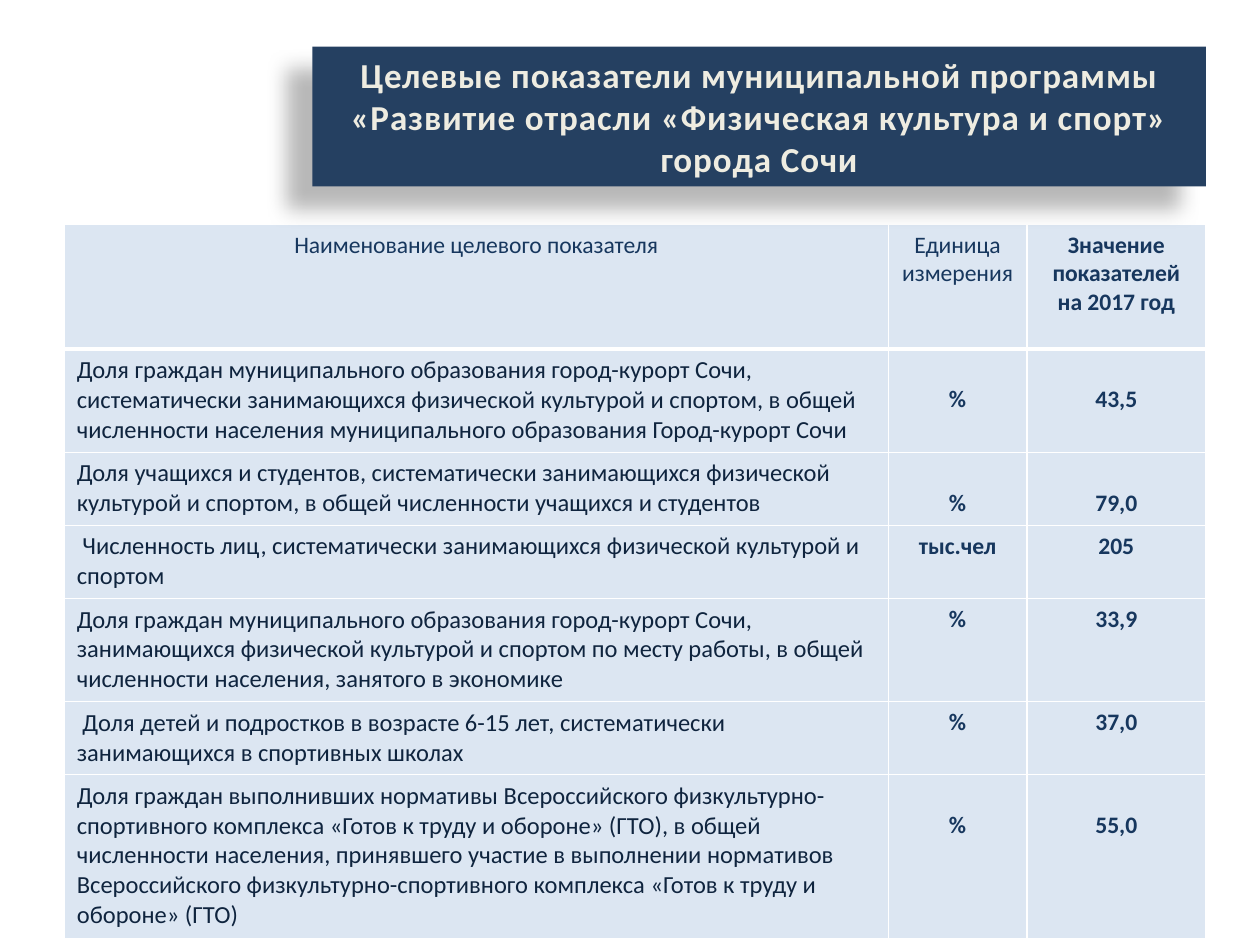
from lxml import etree
from pptx import Presentation
from pptx.dml.color import RGBColor
from pptx.enum.shapes import MSO_SHAPE
from pptx.enum.text import MSO_ANCHOR, PP_ALIGN
from pptx.oxml.ns import qn
from pptx.util import Emu, Inches, Pt

RECT = MSO_SHAPE.RECTANGLE
MIDDLE = MSO_ANCHOR.MIDDLE
CENTER, LEFT = PP_ALIGN.CENTER, PP_ALIGN.LEFT
FONT = "Calibri"
NAVY, BLUE, INK = "254061", "17375E", "0F243E"
PALE, CREAM, WHITE = "DCE6F2", "EEECE1", "FFFFFF"

TITLE = ["Целевые показатели муниципальной программы",
         "«Развитие отрасли «Физическая культура и спорт» города Сочи"]
HEADER = ["Наименование целевого показателя", "Единица измерения",
          "Значение показателей на 2017 год"]
COLS = [6.54, 1.1, 1.42]
HEADER_HEIGHT = 0.99
LINE = 0.24       # height of one line of an indicator's name
MARGIN = 0.05     # above and below the text of a cell

# name, unit, value, lines in the name, whether the value starts a line lower
INDICATORS = [
    ("Доля граждан муниципального образования город-курорт Сочи, систематически "
     "занимающихся физической культурой и спортом, в общей численности населения "
     "муниципального образования Город-курорт Сочи", "%", "43,5", 3, True),
    ("Доля учащихся и студентов, систематически занимающихся физической культурой "
     "и спортом, в общей численности учащихся и студентов", "%", "79,0", 2, True),
    (" Численность лиц, систематически занимающихся физической культурой и спортом",
     "тыс.чел", "205", 2, False),
    ("Доля граждан муниципального образования город-курорт Сочи, занимающихся "
     "физической культурой и спортом по месту работы, в общей численности населения, "
     "занятого в экономике", "%", "33,9", 3, False),
    (" Доля детей и подростков в возрасте 6-15 лет, систематически занимающихся "
     "в спортивных школах", "%", "37,0", 2, False),
    ("Доля граждан выполнивших нормативы Всероссийского физкультурно-спортивного "
     "комплекса «Готов к труду и обороне» (ГТО), в общей численности населения, "
     "принявшего участие в выполнении нормативов Всероссийского "
     "физкультурно-спортивного комплекса «Готов к труду и обороне» (ГТО)",
     "%", "55,0", 5, True),
]


def rgb(value):
    return RGBColor.from_string(value)


def add_run(p, text, size, color, bold=False, align=CENTER):
    p.alignment = align
    r = p.add_run()
    r.text = text
    r.font.name, r.font.size, r.font.bold = FONT, Pt(size), bold
    r.font.color.rgb = rgb(color)
    return r


def add_color(parent, value):
    fill = etree.SubElement(parent, qn("a:solidFill"))
    return etree.SubElement(fill, qn("a:srgbClr"), val=value)


def add_shadow(shape, color, alpha, blur, distance, angle):
    """Alpha in percent, blur and distance in points, angle in degrees."""
    shape.shadow.inherit = False
    effects = shape._element.spPr.find(qn("a:effectLst"))
    shadow = etree.SubElement(
        effects, qn("a:outerShdw"), blurRad=str(Pt(blur)), dist=str(Pt(distance)),
        dir=str(angle * 60000), algn="ctr", rotWithShape="0")
    clr = etree.SubElement(shadow, qn("a:srgbClr"), val=color)
    etree.SubElement(clr, qn("a:alpha"), val=str(alpha * 1000))


def set_borders(cell, **widths):
    tcPr = cell._tc.get_or_add_tcPr()
    for i, side in enumerate("LRTB"):
        line = etree.Element(qn(f"a:ln{side}"), w=str(Pt(widths.get(side, 1))))
        add_color(line, WHITE)
        tcPr.insert(i, line)


def fill_cell(cell, text, size, color, bold=False, align=CENTER, drop=0, bottom=1):
    cell.fill.solid()
    cell.fill.fore_color.rgb = rgb(PALE)
    cell.margin_top = Inches(MARGIN + drop)
    cell.margin_bottom = Inches(MARGIN)
    add_run(cell.text_frame.paragraphs[0], text, size, color, bold, align)
    set_borders(cell, B=bottom)


def title_banner(s, x, y, w, h):
    sp = s.shapes.add_shape(RECT, x, y, w, h)
    sp.fill.solid()
    sp.fill.fore_color.rgb = rgb(NAVY)
    sp.line.fill.background()
    add_shadow(sp, "000000", 28, 11.8, 19.7, 141)
    tf = sp.text_frame
    tf.word_wrap = True
    tf.vertical_anchor = MIDDLE
    for i, text in enumerate(TITLE):
        p = tf.add_paragraph() if i else tf.paragraphs[0]
        r = add_run(p, text, 20, CREAM, bold=True)
        r.font._element.set("spc", "50")


def indicator_table(s, x, y, w):
    heights = [HEADER_HEIGHT] + [n * LINE + 2 * MARGIN for *_, n, _ in INDICATORS]
    table = s.shapes.add_table(len(heights), len(COLS), x, y, w,
                               Inches(sum(heights))).table
    for column, share in zip(table.columns, COLS):
        column.width = Emu(int(w * share / sum(COLS)))
    for row, height in zip(table.rows, heights):
        row.height = Inches(height)
    for i, text in enumerate(HEADER):
        fill_cell(table.cell(0, i), text, 13.5, BLUE, bold=i == 2, bottom=3)
    for i, (name, unit, value, _, lower) in enumerate(INDICATORS, 1):
        fill_cell(table.cell(i, 0), name, 14, INK, align=LEFT)
        for j, text in enumerate((unit, value), 1):
            fill_cell(table.cell(i, j), text, 13.5, BLUE, bold=True,
                      drop=LINE if lower else 0)


def main():
    prs = Presentation()
    prs.slide_width, prs.slide_height = Inches(10), Inches(7.5)
    s = prs.slides.add_slide(prs.slide_layouts[6])
    indicator_table(s, Inches(0.51), Inches(1.78), Inches(9.06))
    title_banner(s, Inches(2.48), Inches(0.37), Inches(7.09), Inches(1.11))
    prs.save("out.pptx")


if __name__ == "__main__":
    main()
